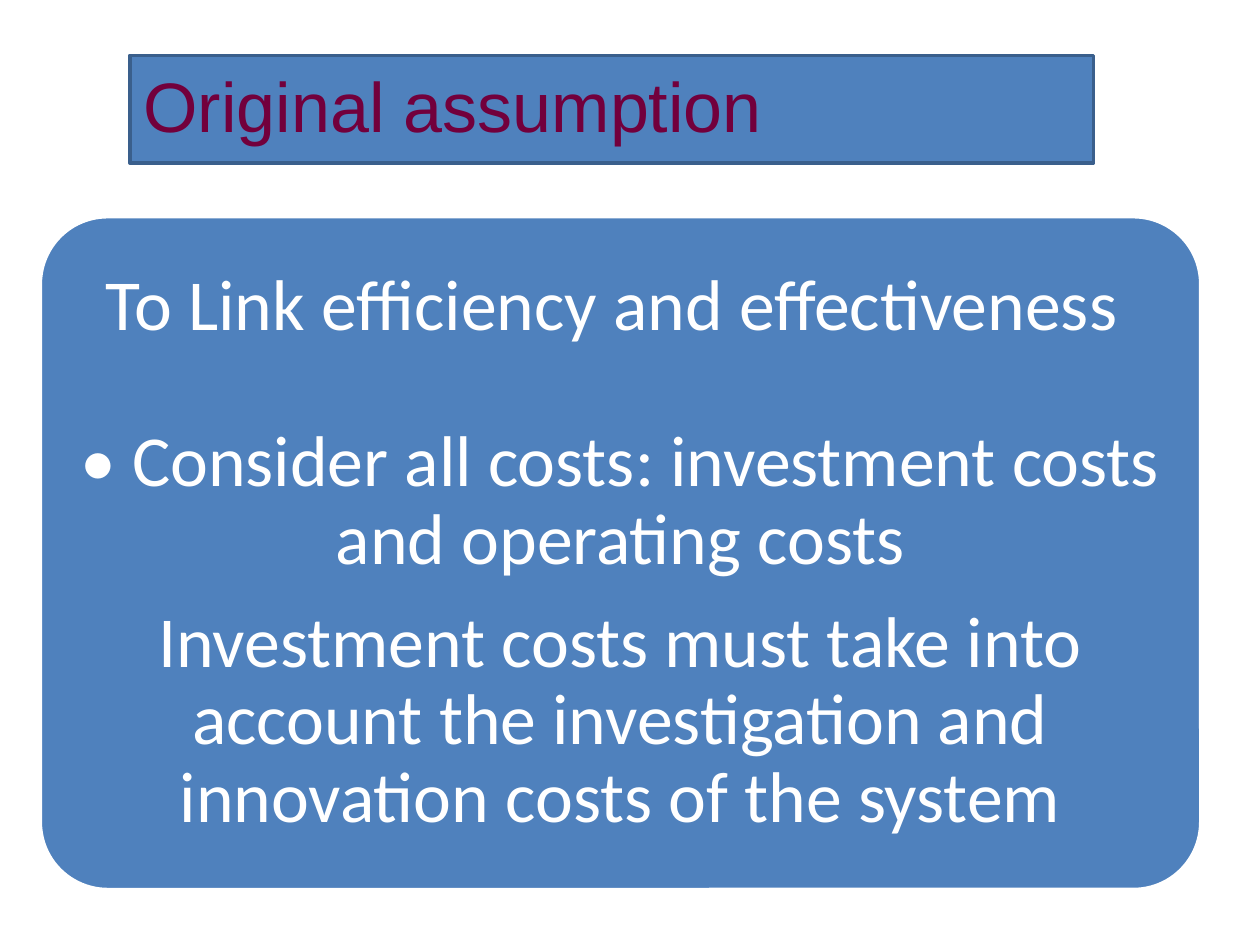
from dataclasses import dataclass
from pptx import Presentation
from pptx.dml.color import RGBColor as RGB
from pptx.enum.shapes import MSO_SHAPE as Shape
from pptx.enum.text import MSO_ANCHOR as Anchor, MSO_AUTO_SIZE as Auto, PP_ALIGN as Align
from pptx.util import Inches, Pt


@dataclass
class Theme:
    blue: RGB = RGB(0x4F, 0x81, 0xBD)
    edge: RGB = RGB(0x3A, 0x5F, 0x8C)
    white: RGB = RGB(0xFF, 0xFF, 0xFF)
    wine: RGB = RGB(0x72, 0x00, 0x3C)
    head: Pt = Pt(40)
    body: Pt = Pt(41)


theme = Theme()


def paint(shape, edge, frame):
    """Fill and outline a shape and format its text frame."""
    shape.fill.solid()
    shape.fill.fore_color.rgb = theme.blue
    shape.line.color.rgb = edge
    shape.line.width = Pt(2)
    for name, value in frame.items():
        setattr(shape.text_frame, name, value)


def write(para, text, font, size, color, style):
    """Put one formatted run into a paragraph."""
    run = para.add_run()
    run.text = text
    run.font.name, run.font.size = font, size
    run.font.color.rgb = color
    for name, value in style.items():
        setattr(para, name, value)


prs = Presentation()
prs.slide_width, prs.slide_height = Inches(10), Inches(7.5)
slide = prs.slides.add_slide(prs.slide_layouts[5])

# Title bar
title = slide.shapes.title
title.left, title.top = Inches(1.03), Inches(0.44)
title.width, title.height = Inches(7.65), Inches(0.78)
paint(title, theme.edge, {
    "margin_left": Inches(0.11), "margin_right": Inches(0.11),
    "margin_top": Inches(0.06), "margin_bottom": Inches(0.06),
    "vertical_anchor": Anchor.TOP, "word_wrap": True,
    "auto_size": Auto.SHAPE_TO_FIT_TEXT,
})
write(title.text_frame.paragraphs[0], "Original assumption", "Arial",
      theme.head, theme.wine, {"alignment": Align.LEFT})

# Rounded panel
panel = slide.shapes.add_shape(Shape.ROUNDED_RECTANGLE, Inches(0.32),
                               Inches(1.72), Inches(9.21), Inches(5.34))
panel.adjustments[0] = 0.1
panel.shadow.inherit = False
inset = Inches(0.02)
paint(panel, theme.white, {
    "margin_left": inset, "margin_right": inset,
    "margin_top": inset, "margin_bottom": inset,
    "vertical_anchor": Anchor.MIDDLE, "word_wrap": True,
})

# Statements, each with the space that follows it
lines = [
    ("To Link efficiency and effectiveness ", 45),
    ("• Consider all costs: investment costs and operating costs", 14.4),
    ("Investment costs must take into account the investigation "
     "and innovation costs of the system", 0),
]
frame = panel.text_frame
for i, (text, gap) in enumerate(lines):
    para = frame.add_paragraph() if i else frame.paragraphs[0]
    write(para, text, "Calibri", theme.body, theme.white, {
        "alignment": Align.CENTER, "line_spacing": 0.9, "space_after": Pt(gap),
    })

prs.save("out.pptx")
